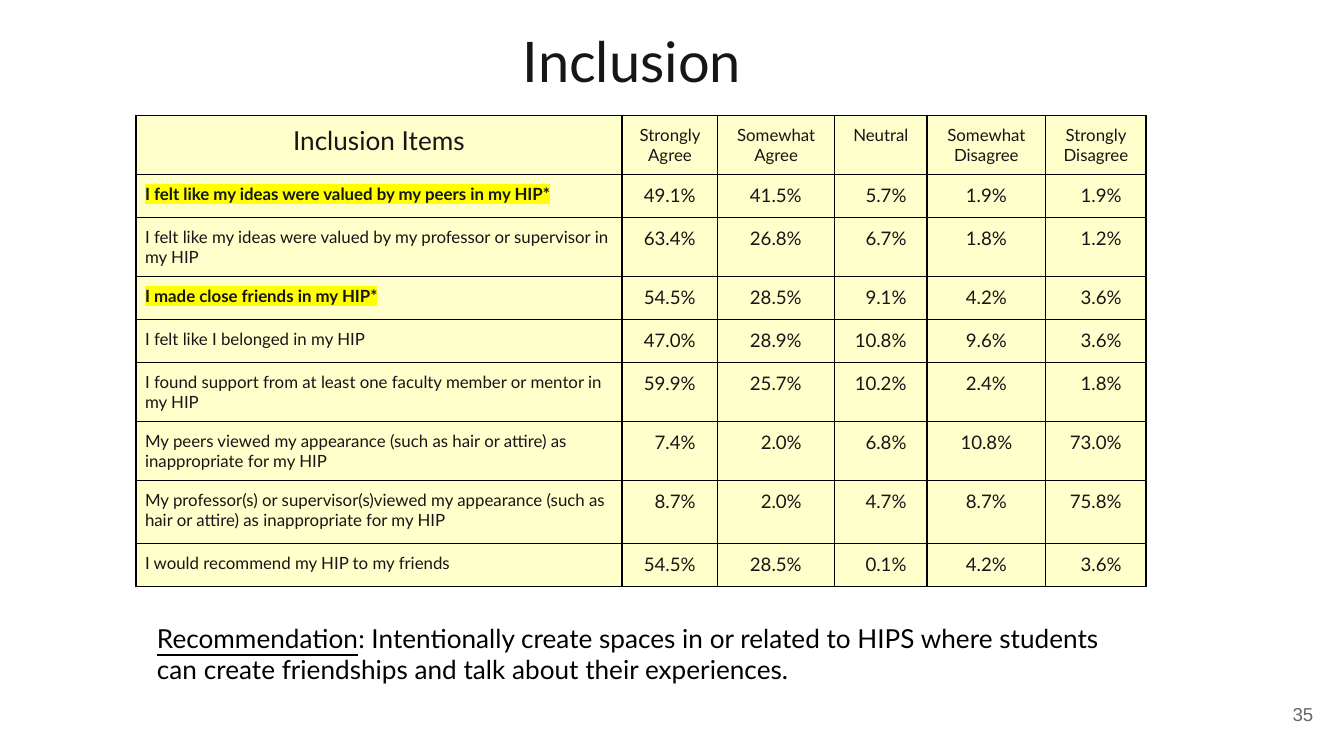
from dataclasses import dataclass

from lxml.etree import SubElement
from pptx import Presentation
from pptx.dml.color import RGBColor
from pptx.enum.text import MSO_ANCHOR as Anchor, MSO_AUTO_SIZE as AutoSize, PP_ALIGN as Align
from pptx.oxml import parse_xml
from pptx.oxml.ns import nsdecls, qn
from pptx.util import Inches, Pt


@dataclass(frozen=True)
class Theme:
    font: str = "Lato"
    number_font: str = "Arial"
    ink: str = "161616"
    black: str = "000000"
    grey: str = "666666"
    cell: str = "FFFFCC"
    marker: str = "FFFF00"
    title_size: int = 30
    lead_size: int = 14
    value_size: int = 10
    label_size: int = 9
    border_width: float = 1
    cell_margin: int = 5


THEME = Theme()

COLUMN_WIDTHS = [3.62, 0.71, 0.87, 0.69, 0.88, 0.75]
ROW_HEIGHTS = [0.42, 0.32, 0.42, 0.32, 0.32, 0.42, 0.42, 0.47, 0.32]
VALUE_WIDTH = 0.38
CENTERED_COLUMN = 4

HEADERS = ["Inclusion Items", "Strongly Agree", "Somewhat Agree", "Neutral",
           "Somewhat Disagree", "Strongly Disagree"]
# An item that ends in an asterisk is highlighted.
ITEMS = [
    ("I felt like my ideas were valued by my peers in my HIP*",
     [49.1, 41.5, 5.7, 1.9, 1.9]),
    ("I felt like my ideas were valued by my professor or supervisor in my HIP",
     [63.4, 26.8, 6.7, 1.8, 1.2]),
    ("I made close friends in my HIP*",
     [54.5, 28.5, 9.1, 4.2, 3.6]),
    ("I felt like I belonged in my HIP",
     [47.0, 28.9, 10.8, 9.6, 3.6]),
    ("I found support from at least one faculty member or mentor in my HIP",
     [59.9, 25.7, 10.2, 2.4, 1.8]),
    ("My peers viewed my appearance (such as hair or attire) as inappropriate for my HIP",
     [7.4, 2.0, 6.8, 10.8, 73.0]),
    ("My professor(s) or supervisor(s)viewed my appearance (such as hair or attire) "
     "as inappropriate for my HIP",
     [8.7, 2.0, 4.7, 8.7, 75.8]),
    ("I would recommend my HIP to my friends",
     [54.5, 28.5, 0.1, 4.2, 3.6]),
]


def style_paragraph(para, size, color, align=Align.LEFT, font=THEME.font, bold=False):
    para.alignment = align
    para.font.name = font
    para.font.size = Pt(size)
    para.font.bold = bold
    para.font.color.rgb = RGBColor.from_string(color)


def prepare_frame(frame, anchor=Anchor.TOP):
    """Wrap the text and give the frame equal margins."""
    frame.word_wrap = True
    frame.auto_size = AutoSize.NONE
    frame.vertical_anchor = anchor
    frame.margin_left = frame.margin_right = Inches(0.1)
    frame.margin_top = frame.margin_bottom = Inches(0.1)


def highlight(span):
    mark = SubElement(span.font._element, qn("a:highlight"))
    SubElement(mark, qn("a:srgbClr"), val=THEME.marker)


def add_borders(cell):
    properties = cell._tc.get_or_add_tcPr()
    for index, side in enumerate(("lnL", "lnR", "lnT", "lnB")):
        properties.insert(index, parse_xml(
            f'<a:{side} {nsdecls("a")} w="{Pt(THEME.border_width)}"><a:solidFill>'
            f'<a:srgbClr val="{THEME.black}"/></a:solidFill></a:{side}>'))


def fill_cell(cell, text, size, align, bold=False):
    cell.margin_left = cell.margin_right = Pt(THEME.cell_margin)
    cell.margin_top = cell.margin_bottom = Pt(THEME.cell_margin)
    cell.fill.solid()
    cell.fill.fore_color.rgb = RGBColor.from_string(THEME.cell)
    add_borders(cell)
    para = cell.text_frame.paragraphs[0]
    style_paragraph(para, size, THEME.ink, align, bold=bold)
    span = para.add_run()
    span.text = text
    return span


def add_title(page, left, top, width, height):
    title = page.shapes.title
    title.left, title.top = Inches(left), Inches(top)
    title.width, title.height = Inches(width), Inches(height)
    prepare_frame(title.text_frame)
    title.text_frame.text = "Inclusion"
    style_paragraph(title.text_frame.paragraphs[0], THEME.title_size, THEME.ink)


def add_survey_table(page, left, top):
    table = page.shapes.add_table(
        len(ROW_HEIGHTS), len(COLUMN_WIDTHS), Inches(left), Inches(top),
        Inches(sum(COLUMN_WIDTHS)), Inches(sum(ROW_HEIGHTS))).table
    table.first_row = table.horz_banding = False
    for column, width in zip(table.columns, COLUMN_WIDTHS):
        column.width = Inches(width)
    for row, height in zip(table.rows, ROW_HEIGHTS):
        row.height = Inches(height)

    for index, header in enumerate(HEADERS):
        size = THEME.label_size if index else THEME.lead_size
        fill_cell(table.cell(0, index), header, size, Align.CENTER)

    for row, (item, values) in enumerate(ITEMS, start=1):
        marked = item.endswith("*")
        span = fill_cell(table.cell(row, 0), item, THEME.label_size, Align.LEFT, marked)
        if marked:
            highlight(span)
        for column, value in enumerate(values, start=1):
            cell = table.cell(row, column)
            centered = column == CENTERED_COLUMN
            fill_cell(cell, f"{value:.1f}%", THEME.value_size,
                      Align.CENTER if centered else Align.RIGHT)
            if not centered:
                # Percent signs line up, with the widest value centred.
                cell.margin_right = Inches((COLUMN_WIDTHS[column] - VALUE_WIDTH) / 2)


def add_recommendation(page, left, top, width, height):
    box = page.shapes.add_textbox(Inches(left), Inches(top), Inches(width), Inches(height))
    prepare_frame(box.text_frame)
    para = box.text_frame.paragraphs[0]
    style_paragraph(para, THEME.lead_size, THEME.black)
    lead = para.add_run()
    lead.text = "Recommendation"
    lead.font.underline = True
    para.add_run().text = (": Intentionally create spaces in or related to HIPS where students "
                           "can create friendships and talk about their experiences.")


def add_page_number(page, left, top, width, height):
    box = page.shapes.add_textbox(Inches(left), Inches(top), Inches(width), Inches(height))
    prepare_frame(box.text_frame, Anchor.MIDDLE)
    box.text_frame.text = "35"
    style_paragraph(box.text_frame.paragraphs[0], THEME.value_size, THEME.grey,
                    Align.RIGHT, THEME.number_font)


def main():
    deck = Presentation()
    deck.slide_width = Inches(10)
    deck.slide_height = deck.slide_width * 9 // 16
    page = deck.slides.add_slide(deck.slide_layouts[5])
    add_page_number(page, 9.27, 5.1, 0.6, 0.43)
    add_recommendation(page, 1.07, 4.53, 7.36, 0.81)
    add_survey_table(page, 1.01, 0.86)
    add_title(page, 3.79, 0.1, 2.69, 0.63)
    deck.save("out.pptx")


if __name__ == "__main__":
    main()
